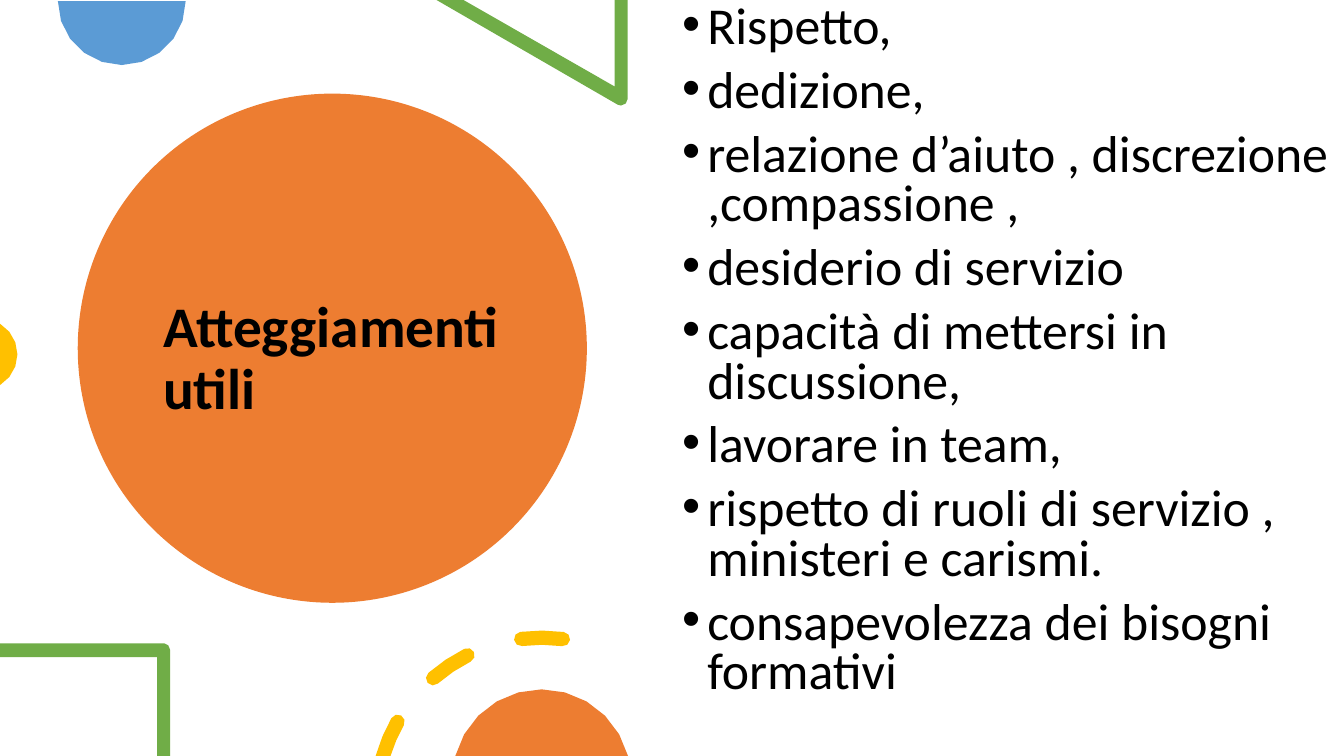
from math import cos, radians, sin

from lxml import etree
from pptx import Presentation
from pptx import util as u
from pptx.dml.color import RGBColor
from pptx.enum import shapes, text
from pptx.oxml.ns import qn

# Content
TITLE = "Atteggiamenti utili"
ATTITUDES = [
    "Rispetto,",
    "dedizione,",
    "relazione d’aiuto , discrezione ,compassione ,",
    "desiderio di servizio",
    "capacità di mettersi in discussione,",
    "lavorare in team,",
    "rispetto di ruoli di servizio , ministeri e carismi.",
    "consapevolezza dei bisogni formativi",
]

# Look
FONT = "Calibri"
BLACK = RGBColor(0x00, 0x00, 0x00)
ORANGE = RGBColor(0xED, 0x7D, 0x31)
BLUE = RGBColor(0x5B, 0x9B, 0xD5)
GREEN = RGBColor(0x70, 0xAD, 0x47)
YELLOW = RGBColor(0xFF, 0xC0, 0x00)

# Places in cm; angles in degrees, clockwise from the top
TITLE_CIRCLE = (1.96, 2.36, 12.83, 12.83)
TITLE_BOX = (3.86, 3.43, 9.6, 11.3)
LIST_BOX = (16.94, 0, 16.92, 19.05)
# Cut circles: centre, radius, first and last angle, steps
BLUE_CIRCLE = ((3.07, 0.03), 1.61, 90, 270, 10)
YELLOW_CIRCLE = ((-0.46, 8.93), 0.9, 31, 149, 6)
ORANGE_CIRCLE = ((13.65, 19.62), 2.25, -75.3, 75.3, 10)
TRIANGLE = [(15.82, 0), (15.49, 0), (15.49, 2.18), (11.68, 0), (11, 0),
            (15.57, 2.64), (15.65, 2.66), (15.77, 2.61), (15.82, 2.49)]
CORNER = [(4.14, 16.21), (0, 16.21), (0, 16.56), (3.96, 16.56), (3.96, 19.05),
          (4.29, 19.05), (4.29, 16.38), (4.24, 16.26)]
RING_CENTRE, RING_RADIUS, DASH_HALF = (13.65, 20.24), 4.17, 0.18
ROUND_DASHES = [(-7.1, 7.4), (-41, -26.6)]
CUT_DASH_END, CUT_DASH_OUTER, CUT_DASH_INNER = -60.5, -74.1, -72.65


def polar(centre, radius, angle):
    a = radians(angle)
    return centre[0] + radius * sin(a), centre[1] - radius * cos(a)


def arc(centre, radius, first, last, steps):
    return [polar(centre, radius, first + (last - first) * i / steps)
            for i in range(steps + 1)]


def dash_cap(angle, start):
    centre = polar(RING_CENTRE, RING_RADIUS, angle)
    return arc(centre, DASH_HALF, angle + start, angle + start + 180, 4)[1:-1]


def dash_side(side, first, last):
    return arc(RING_CENTRE, RING_RADIUS + side * DASH_HALF, first, last, 2)


def paint(shape, colour):
    shape.shadow.inherit = False
    shape.fill.solid()
    shape.fill.fore_color.rgb = colour
    shape.line.fill.background()


def draw_outline(contours, colour):
    contours = [[(u.Cm(x), u.Cm(y)) for x, y in c] for c in contours]
    builder = slide.shapes.build_freeform(*contours[0][0])
    builder.add_line_segments(contours[0][1:], close=True)
    for contour in contours[1:]:
        builder.move_to(*contour[0])
        builder.add_line_segments(contour[1:], close=True)
    paint(builder.convert_to_shape(), colour)


def write(box, lines, size, spacing, anchor):
    frame = slide.shapes.add_textbox(*map(u.Cm, box)).text_frame
    frame.word_wrap = True
    frame.vertical_anchor = anchor
    frame.text = "\n".join(lines)
    for paragraph in frame.paragraphs:
        paragraph.line_spacing = spacing
        paragraph.font.name = FONT
        paragraph.font.size = u.Pt(size)
        paragraph.font.color.rgb = BLACK
    return frame.paragraphs


prs = Presentation()
prs.slide_width, prs.slide_height = u.Cm(33.87), u.Cm(19.05)
slide = prs.slides.add_slide(prs.slide_layouts[6])

# Title on its circle
paint(slide.shapes.add_shape(shapes.MSO_SHAPE.OVAL, *map(u.Cm, TITLE_CIRCLE)), ORANGE)
title = write(TITLE_BOX, [TITLE], 41, 0.9, text.MSO_ANCHOR.MIDDLE)
title[0].font.bold = True

# Decorations at the top and left edges
draw_outline([arc(*BLUE_CIRCLE)], BLUE)
draw_outline([TRIANGLE], GREEN)
draw_outline([arc(*YELLOW_CIRCLE)], YELLOW)

# Bulleted attitudes
for attitude in write(LIST_BOX, ATTITUDES, 37, 0.8, text.MSO_ANCHOR.TOP):
    attitude.space_before = u.Pt(10)
    properties = attitude._p.get_or_add_pPr()
    properties.set("marL", str(u.Cm(0.635)))
    properties.set("indent", str(-u.Cm(0.635)))
    run_defaults = properties.find(qn("a:defRPr"))
    run_defaults.addprevious(etree.Element(qn("a:buFont"), typeface="Arial"))
    run_defaults.addprevious(etree.Element(qn("a:buChar"), char="•"))

# Decorations at the bottom edge
draw_outline([CORNER], GREEN)
dashes = [dash_side(1, CUT_DASH_OUTER, CUT_DASH_END) + dash_cap(CUT_DASH_END, 0)
          + dash_side(-1, CUT_DASH_END, CUT_DASH_INNER)]
dashes += [dash_side(1, a, b) + dash_cap(b, 0) + dash_side(-1, b, a) + dash_cap(a, 180)
           for a, b in ROUND_DASHES]
draw_outline(dashes, YELLOW)
draw_outline([arc(*ORANGE_CIRCLE)], ORANGE)

prs.save("out.pptx")
